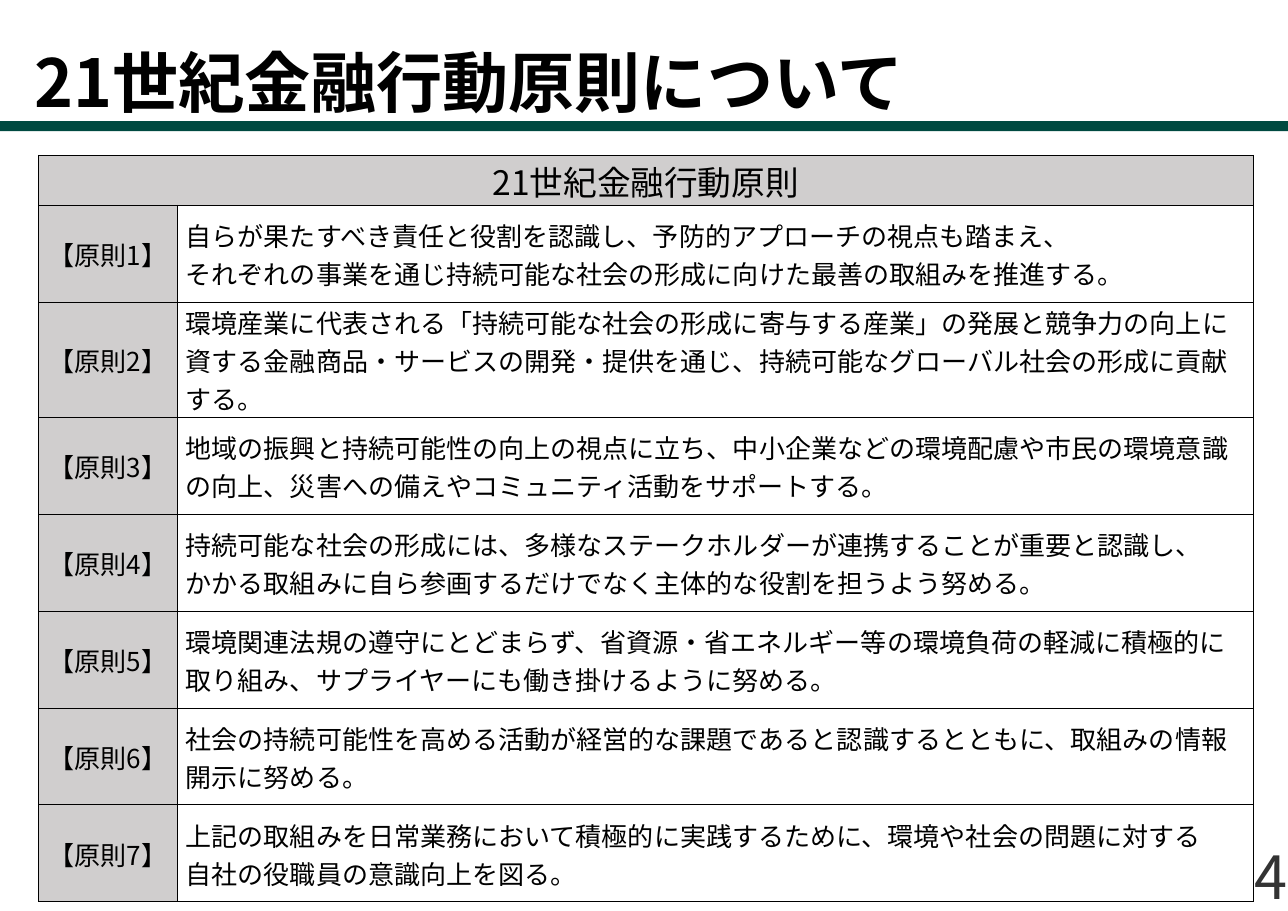
import copy

import pptx
import pptx.dml.color
import pptx.enum.lang
import pptx.enum.shapes
import pptx.enum.text
import pptx.oxml
import pptx.oxml.ns
import pptx.util

Pt = pptx.util.Pt
ALIGN = pptx.enum.text.PP_ALIGN
ANCHOR = pptx.enum.text.MSO_ANCHOR
qn = pptx.oxml.ns.qn

WIDTH, HEIGHT = 841.68, 595.44
HEADING = "21世紀金融行動原則"
PRINCIPLES = [
    "自らが果たすべき責任と役割を認識し、予防的アプローチの視点も踏まえ、\n"
    "それぞれの事業を通じ持続可能な社会の形成に向けた最善の取組みを推進する。",
    "環境産業に代表される「持続可能な社会の形成に寄与する産業」の発展と競争力の向上に"
    "資する金融商品・サービスの開発・提供を通じ、持続可能なグローバル社会の形成に貢献する。",
    "地域の振興と持続可能性の向上の視点に立ち、中小企業などの環境配慮や市民の環境意識"
    "の向上、災害への備えやコミュニティ活動をサポートする。",
    "持続可能な社会の形成には、多様なステークホルダーが連携することが重要と認識し、\n"
    "かかる取組みに自ら参画するだけでなく主体的な役割を担うよう努める。",
    "環境関連法規の遵守にとどまらず、省資源・省エネルギー等の環境負荷の軽減に積極的に"
    "取り組み、サプライヤーにも働き掛けるように努める。",
    "社会の持続可能性を高める活動が経営的な課題であると認識するとともに、取組みの情報"
    "開示に努める。",
    "上記の取組みを日常業務において積極的に実践するために、環境や社会の問題に対する\n"
    "自社の役職員の意識向上を図る。",
]


def rgb(code):
    return pptx.dml.color.RGBColor.from_string(code)


def write(frame, text, size, font, color="000000", bold=False, align=ALIGN.LEFT):
    paragraph = frame.paragraphs[0]
    paragraph.text = text.replace("\n", "\v")
    paragraph.alignment = align
    for run in paragraph.runs:
        run.font.name = font
        run.font.size = Pt(size)
        run.font.bold = bold
        run.font.color.rgb = rgb(color)
        run.font.language_id = pptx.enum.lang.MSO_LANGUAGE_ID.JAPANESE
        properties = run.font._element
        east_asian = copy.deepcopy(properties.find(qn("a:latin")))
        east_asian.tag = qn("a:ea")
        properties.find(qn("a:latin")).addnext(east_asian)
    for line_break in paragraph._p.findall(qn("a:br")):
        line_break.append(copy.deepcopy(properties))


class PrinciplesSlide:
    font = "Noto Sans CJK JP"
    green = "004A41"
    grey = "D0CECE"
    border = "000000"

    def __init__(self, deck):
        self.slide = deck.slides.add_slide(deck.slide_layouts[5])

    def frame(self, frame, insets):
        frame.word_wrap = True
        frame.auto_size = pptx.enum.text.MSO_AUTO_SIZE.NONE
        frame.vertical_anchor = ANCHOR.BOTTOM
        frame.margin_left, frame.margin_top, frame.margin_right, frame.margin_bottom = map(Pt, insets)
        return frame

    def title(self, text, height):
        heading = self.slide.shapes.title
        heading.left, heading.top = Pt(0), Pt(0)
        heading.width, heading.height = Pt(WIDTH), Pt(height)
        write(self.frame(heading.text_frame, (22.3, 0, 22.3, 0)), text, 43.2, self.font, bold=True)

    def rule(self, top, height):
        bar = self.slide.shapes.add_shape(
            pptx.enum.shapes.MSO_SHAPE.RECTANGLE, Pt(0), Pt(top), Pt(WIDTH), Pt(height))
        bar.shadow.inherit = False
        bar.fill.solid()
        bar.fill.fore_color.rgb = rgb(self.green)
        bar.line.fill.background()

    def page_number(self, text, width, height):
        corner = self.slide.shapes.add_textbox(
            Pt(WIDTH - width), Pt(HEIGHT - height), Pt(width), Pt(height))
        write(self.frame(corner.text_frame, (0, 0, 0, 0)), text, 38.9, self.font,
              color="333333", align=ALIGN.RIGHT)

    def cell(self, cell, text, size=17, fill=None, align=ALIGN.LEFT, side=0.7):
        cell.vertical_anchor = ANCHOR.MIDDLE
        cell.margin_left = cell.margin_right = Pt(side)
        cell.margin_top, cell.margin_bottom = Pt(0.7), Pt(0)
        write(cell.text_frame, text, size, self.font, align=align)
        self.paint(cell, fill)

    def paint(self, cell, fill):
        if fill:
            cell.fill.solid()
            cell.fill.fore_color.rgb = rgb(fill)
        else:
            cell.fill.background()
        properties = cell._tc.get_or_add_tcPr()
        for place, edge in enumerate(("lnL", "lnR", "lnT", "lnB")):
            properties.insert(place, pptx.oxml.parse_xml(
                f'<a:{edge} xmlns:a="http://schemas.openxmlformats.org/drawingml/2006/main" '
                f'w="{Pt(0.5)}"><a:solidFill><a:srgbClr val="{self.border}"/></a:solidFill></a:{edge}>'))

    def table(self, heading, principles, left, top, columns, rows):
        grid = self.slide.shapes.add_table(
            len(rows), len(columns), Pt(left), Pt(top), Pt(sum(columns)), Pt(sum(rows))).table
        grid.first_row = grid.horz_banding = False
        for column, width in zip(grid.columns, columns):
            column.width = Pt(width)
        for row, height in zip(grid.rows, rows):
            row.height = Pt(height)
        grid.cell(0, 0).merge(grid.cell(0, 1))
        self.cell(grid.cell(0, 0), heading, size=22, fill=self.grey, align=ALIGN.CENTER)
        self.paint(grid.cell(0, 1), self.grey)
        for number, principle in enumerate(principles, 1):
            self.cell(grid.cell(number, 0), f"【原則{number}】", fill=self.grey, align=ALIGN.CENTER)
            self.cell(grid.cell(number, 1), principle, side=5.8)


def main():
    deck = pptx.Presentation()
    deck.slide_width, deck.slide_height = Pt(WIDTH), Pt(HEIGHT)
    page = PrinciplesSlide(deck)
    page.rule(79.2, 6.5)
    page.page_number("4", 108.7, 35.3)
    page.title(HEADING + "について", 79.2)
    page.table(HEADING, PRINCIPLES, 25.2, 101.5, (90.4, 703.2),
               [32.7, 63.4, 74.5] + [63.4] * 5)
    deck.save("out.pptx")


if __name__ == "__main__":
    main()
